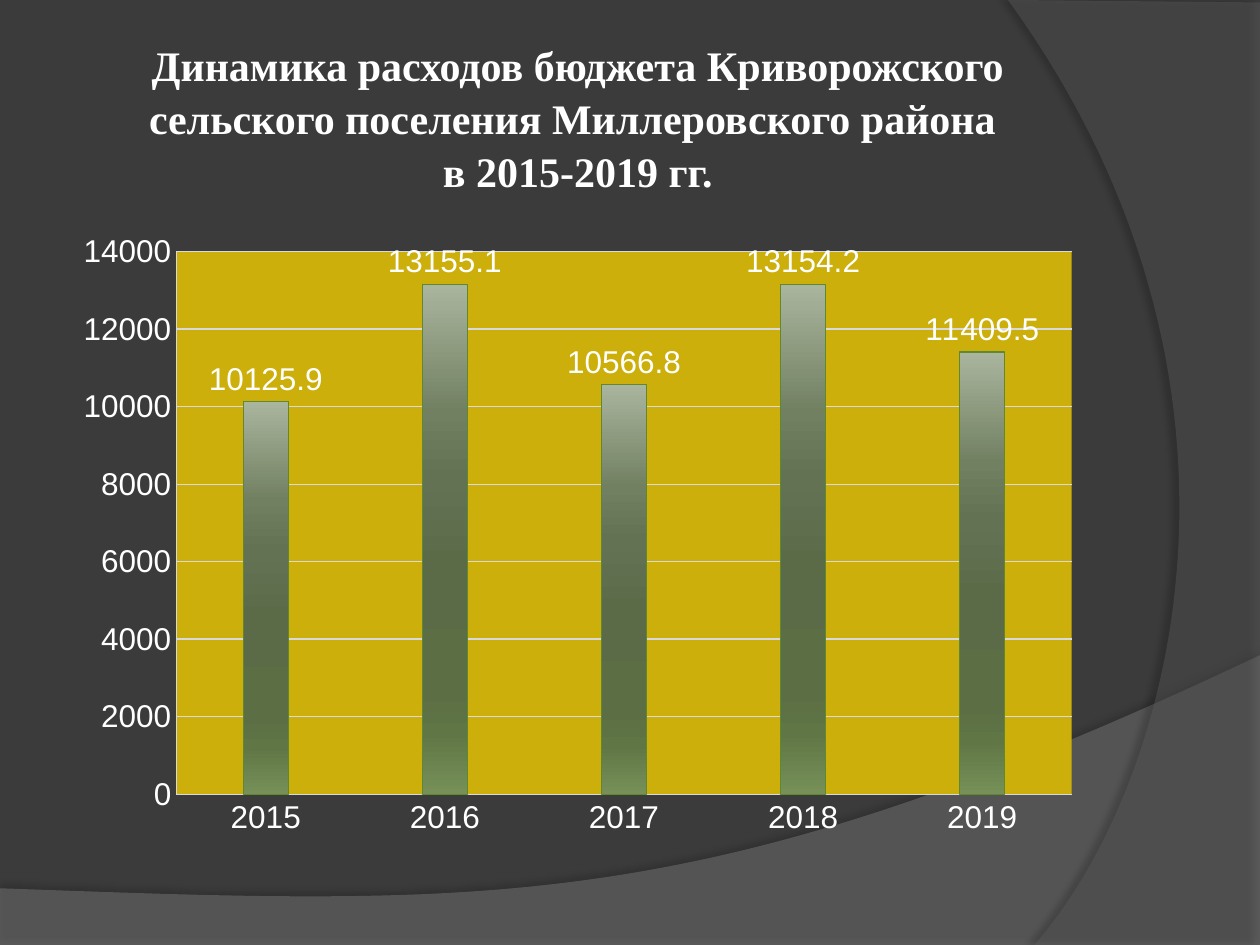
from copy import deepcopy

from lxml.etree import SubElement
from pptx import Presentation
from pptx.chart.data import CategoryChartData
from pptx.dml.color import RGBColor
from pptx.enum.chart import XL_CHART_TYPE, XL_LABEL_POSITION, XL_TICK_MARK
from pptx.enum.text import MSO_ANCHOR, MSO_AUTO_SIZE, PP_ALIGN
from pptx.oxml import parse_xml
from pptx.oxml.ns import nsdecls, qn
from pptx.util import Inches, Pt

COLORS = {
    "background": "3B3B3B", "text": "FFFFFF", "lower_band": "7F7F7F",
    "right_band": "5E5E5E", "shadow": "000000", "plot": "CCAF0A",
    "grid": "D9D9D9", "bar_line": "5F882F",
}
TITLE = ("Динамика расходов бюджета Криворожского сельского поселения "
         "Миллеровского района \vв 2015-2019 гг.")
EXPENSES = {"2015": 10125.9, "2016": 13155.1, "2017": 10566.8,
            "2018": 13154.2, "2019": 11409.5}
BAR_GRADIENT = [(0, "A9B59D"), (25, "728062"), (38, "647254"), (55, "5B6B48"),
                (80, "5B6E44"), (88, "607645"), (100, "769058")]
BANDS = [
    dict(color="lower_band", opacity=45, shadow=(35, 4, 3.5, 270),
         outline=[(0, 7.05), (0, 7.51), (10, 7.51), (10, 5.2),
                  ((5.59, 7.29), (3.91, 7.19), (0, 7.05))]),
    dict(color="right_band", opacity=40, shadow=(45, 4, 4, 180),
         outline=[(10, 0.02), (10, 7.5), (8.21, 7.5),
                  ((9.35, 6.19), (10.18, 3), (8, 0)), (10, 0.02)]),
]
LEFT, WIDTH = 0.5, 8.17
PLOT_LAYOUT = {"x": 0.11, "y": 0.05, "w": 0.87, "h": 0.87}
CURVE_STEPS = 60


def rgb(name):
    """Return a palette colour."""
    return RGBColor.from_string(COLORS[name])


def curve_points(start, first, second, end):
    """Sample a cubic curve after its start."""
    points = []
    for step in range(1, CURVE_STEPS + 1):
        t = step / CURVE_STEPS
        weights = ((1 - t) ** 3, 3 * t * (1 - t) ** 2, 3 * t * t * (1 - t), t ** 3)
        points.append(tuple(sum(w * p[axis] for w, p in zip(weights, (start, first, second, end)))
                            for axis in (0, 1)))
    return points


def add_band(slide, color, opacity, shadow, outline):
    """Draw one translucent background band with its shadow."""
    points = [outline[0]]
    for part in outline[1:]:
        points += curve_points(points[-1], *part) if len(part) == 3 else [part]
    corners = [(Inches(x), Inches(y)) for x, y in points]
    builder = slide.shapes.build_freeform(*corners[0])
    builder.add_line_segments(corners[1:], close=True)
    band = builder.convert_to_shape()
    band.fill.solid()
    band.fill.fore_color.rgb = rgb(color)
    band.line.fill.background()
    band.shadow.inherit = False
    properties = band.element.spPr
    fill_color = properties.find(qn("a:solidFill")).find(qn("a:srgbClr"))
    SubElement(fill_color, qn("a:alpha"), val=str(opacity * 1000))
    strength, blur, distance, angle = shadow
    properties.find(qn("a:effectLst")).append(parse_xml(
        f'<a:outerShdw {nsdecls("a")} blurRad="{Pt(blur)}" dist="{Pt(distance)}" '
        f'dir="{angle * 60000}" algn="ctr" rotWithShape="0">'
        f'<a:srgbClr val="{COLORS["shadow"]}"><a:alpha val="{strength * 1000}"/>'
        f'</a:srgbClr></a:outerShdw>'))


def write_text(frame, text, *, font, size, color, bold, align, spacing):
    """Fill a text frame and format its runs and line breaks."""
    frame.text = text
    paragraph = frame.paragraphs[0]
    paragraph.alignment = align
    paragraph.line_spacing = spacing
    for run in paragraph.runs:
        run.font.name = font
        run.font.size = Pt(size)
        run.font.bold = bold
        run.font.color.rgb = rgb(color)
    for line_break in frame._txBody.iter(qn("a:br")):
        line_break.append(deepcopy(paragraph.runs[0].font._element))


def place_title(slide):
    """Move and format the title above the bands."""
    title = slide.shapes.title
    title.element.getparent().append(title.element)
    title.left, title.top = Inches(LEFT), Inches(0.3)
    title.width, title.height = Inches(WIDTH), Inches(1.25)
    frame = title.text_frame
    frame.word_wrap = True
    frame.auto_size = MSO_AUTO_SIZE.NONE
    frame.vertical_anchor = MSO_ANCHOR.MIDDLE
    frame.margin_left = frame.margin_right = Inches(0.05)
    frame.margin_top = frame.margin_bottom = Inches(0.05)
    write_text(frame, TITLE, font="Times New Roman", size=24, color="text",
               bold=True, align=PP_ALIGN.CENTER, spacing=1.05)


def style_plot(chart):
    """Fix the plot area position and fill."""
    plot_area = chart.element.chart.plotArea
    for old_layout in plot_area.findall(qn("c:layout")):
        plot_area.remove(old_layout)
    modes = '<c:xMode val="edge"/><c:yMode val="edge"/>'
    sizes = "".join(f'<c:{key} val="{value}"/>' for key, value in PLOT_LAYOUT.items())
    plot_area.insert(0, parse_xml(
        f'<c:layout {nsdecls("c")}><c:manualLayout><c:layoutTarget val="inner"/>'
        f'{modes}{sizes}</c:manualLayout></c:layout>'))
    plot_area.append(parse_xml(
        f'<c:spPr {nsdecls("c", "a")}><a:solidFill><a:srgbClr val="{COLORS["plot"]}"/>'
        f'</a:solidFill></c:spPr>'))


def style_bars(plot):
    """Give the bars their gradient, outline and value labels."""
    plot.gap_width = 300
    plot.vary_by_categories = False
    bars = plot.series[0]
    bars.format.fill.solid()
    bars.format.line.color.rgb = rgb("bar_line")
    bars.format.line.width = Pt(0.75)
    stops = "".join(f'<a:gs pos="{position * 1000}"><a:srgbClr val="{color}"/></a:gs>'
                    for position, color in BAR_GRADIENT)
    solid = next(bars._element.iter(qn("a:solidFill")))
    solid.getparent().replace(solid, parse_xml(
        f'<a:gradFill {nsdecls("a")} rotWithShape="1"><a:gsLst>{stops}</a:gsLst>'
        f'<a:lin ang="5400000" scaled="0"/></a:gradFill>'))
    plot.has_data_labels = True
    labels = plot.data_labels
    labels.show_value = True
    labels.position = XL_LABEL_POSITION.OUTSIDE_END
    labels.font.size = Pt(18)
    labels.font.color.rgb = rgb("text")


def add_expense_chart(slide):
    """Add the yearly expenses column chart."""
    expenses = CategoryChartData()
    expenses.categories = list(EXPENSES)
    expenses.add_series("Series 1", list(EXPENSES.values()))
    chart = slide.shapes.add_chart(
        XL_CHART_TYPE.COLUMN_CLUSTERED, Inches(LEFT), Inches(1.75),
        Inches(WIDTH), Inches(4.95), expenses).chart
    chart.has_legend = False
    chart.has_title = False
    chart.font.name = "Arial"
    chart.font.size = Pt(18)
    chart.font.color.rgb = rgb("text")
    amounts = chart.value_axis
    amounts.minimum_scale, amounts.maximum_scale, amounts.major_unit = 0, 14000, 2000
    amounts.has_major_gridlines = True
    amounts.major_gridlines.format.line.color.rgb = rgb("grid")
    for axis in (chart.category_axis, amounts):
        axis.major_tick_mark = axis.minor_tick_mark = XL_TICK_MARK.NONE
        axis.format.line.color.rgb = rgb("grid")
    style_plot(chart)
    style_bars(chart.plots[0])


def main():
    """Build and save the slide."""
    presentation = Presentation()
    presentation.slide_width, presentation.slide_height = Inches(10), Inches(7.5)
    slide = presentation.slides.add_slide(presentation.slide_layouts[5])
    slide.background.fill.solid()
    slide.background.fill.fore_color.rgb = rgb("background")
    for band in BANDS:
        add_band(slide, **band)
    place_title(slide)
    add_expense_chart(slide)
    presentation.save("out.pptx")


if __name__ == "__main__":
    main()
